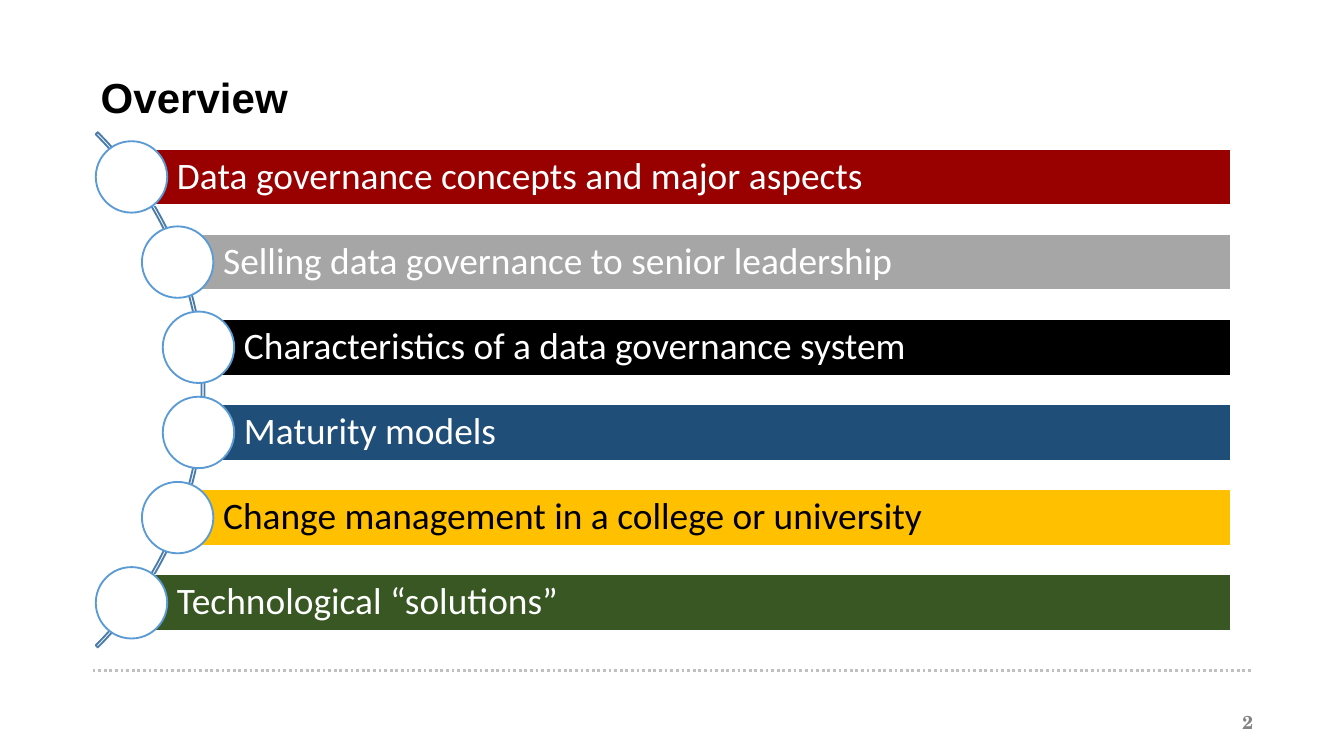
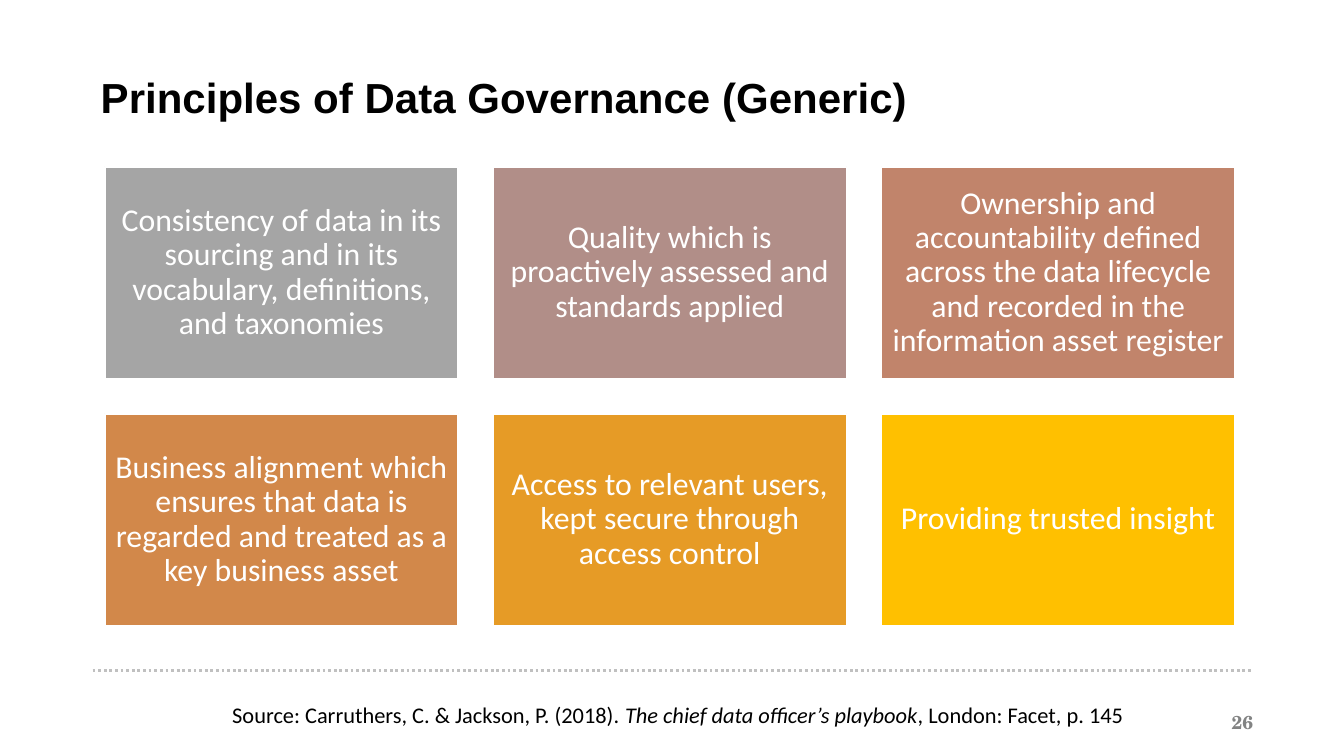
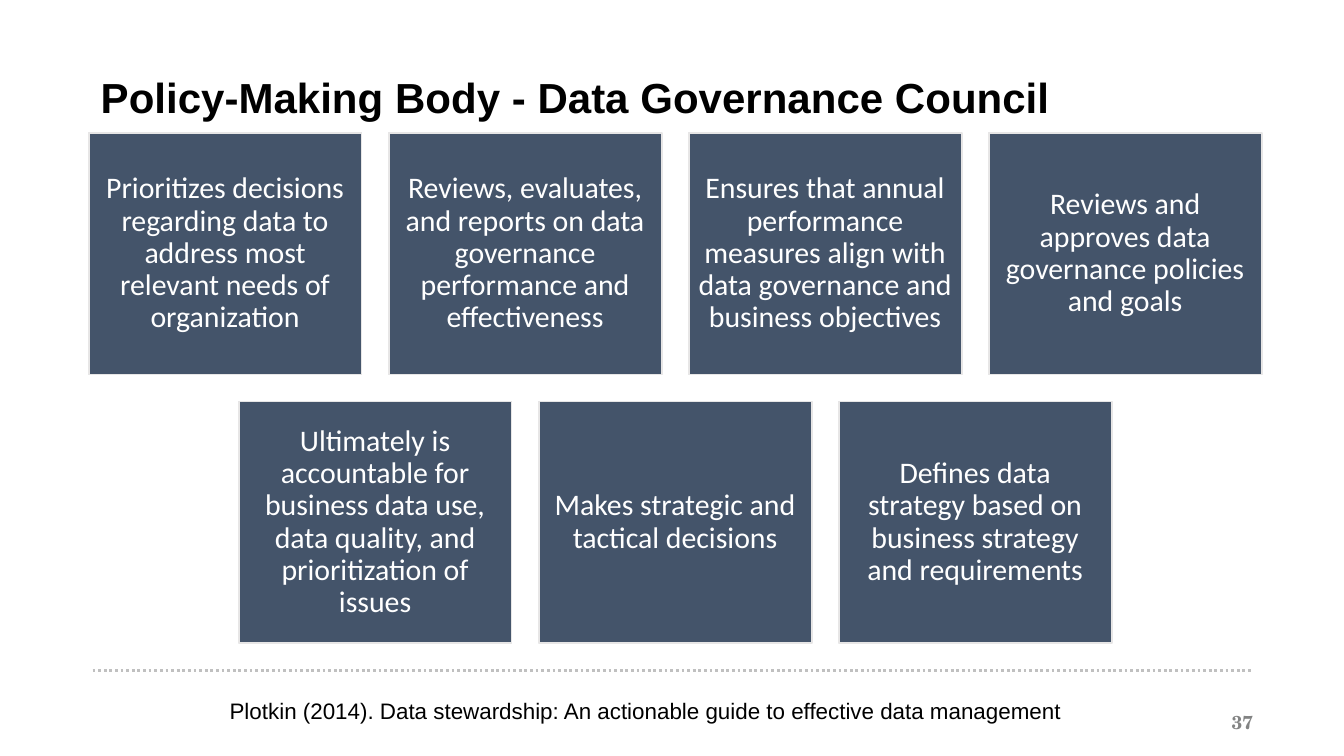
from dataclasses import dataclass
from math import sqrt

from lxml.etree import SubElement
from pptx import Presentation
from pptx.dml.color import RGBColor
from pptx.enum.dml import MSO_LINE
from pptx.enum.shapes import MSO_CONNECTOR, MSO_SHAPE
from pptx.enum.text import MSO_ANCHOR, MSO_AUTO_SIZE, PP_ALIGN
from pptx.oxml.ns import qn
from pptx.util import Cm, Pt

WHITE = RGBColor(0xFF, 0xFF, 0xFF)
BLACK = RGBColor(0x00, 0x00, 0x00)
DARK_RED = RGBColor(0x99, 0x00, 0x00)
LIGHT_GRAY = RGBColor(0xA6, 0xA6, 0xA6)
NAVY = RGBColor(0x1F, 0x4E, 0x79)
GOLD = RGBColor(0xFF, 0xC0, 0x00)
DARK_GREEN = RGBColor(0x38, 0x57, 0x23)
SKY_BLUE = RGBColor(0x5B, 0x9B, 0xD5)
ARC_BLUE = RGBColor(0x49, 0x7C, 0xAB)
MEDIUM_GRAY = RGBColor(0xA5, 0xA5, 0xA5)
DUSTY_ROSE = RGBColor(0xB1, 0x8E, 0x88)
CLAY = RGBColor(0xC1, 0x84, 0x6B)
COPPER = RGBColor(0xD2, 0x88, 0x4A)
AMBER = RGBColor(0xE6, 0x9B, 0x26)
SLATE = RGBColor(0x44, 0x54, 0x6A)
PALE_GRAY = RGBColor(0xE7, 0xE6, 0xE6)
RULE_GRAY = RGBColor(0xC0, 0xC0, 0xC0)
NUMBER_GRAY = RGBColor(0x82, 0x83, 0x83)

HEADING_FONT = "Arial"
BODY_FONT = "Calibri"
NUMBER_FONT = "TeX Gyre Schola"

ARC_CENTER_X, ARC_CENTER_Y, ARC_RADIUS = -3.02, 7.37, 6.885
TOPIC_RADIUS, TOPIC_PITCH = 6.82, 1.61
BAR_RIGHT, BAR_HEIGHT, CIRCLE_SIZE = 23.27, 1.07, 1.35


@dataclass(frozen=True)
class Topic:
    text: str
    fill: RGBColor
    color: RGBColor = WHITE


@dataclass(frozen=True)
class Card:
    text: str
    fill: RGBColor = SLATE


@dataclass(frozen=True)
class CardGrid:
    center: float
    top: float
    width: float
    height: float
    gap: float
    size: float
    line: RGBColor


@dataclass(frozen=True)
class Phrase:
    text: str
    italic: bool = False


TOPICS = [
    Topic("Data governance concepts and major aspects", DARK_RED),
    Topic("Selling data governance to senior leadership", LIGHT_GRAY),
    Topic("Characteristics of a data governance system", BLACK),
    Topic("Maturity models", NAVY),
    Topic("Change management in a college or university", GOLD, BLACK),
    Topic("Technological “solutions”", DARK_GREEN),
]

PRINCIPLE_GRID = CardGrid(12.66, 3.15, 6.68, 4.01, 0.66, 17, WHITE)
PRINCIPLES = [
    [
        Card("Consistency of data in its sourcing and in its vocabulary, "
             "definitions, and taxonomies", MEDIUM_GRAY),
        Card("Quality which is proactively assessed and standards applied", DUSTY_ROSE),
        Card("Ownership and accountability defined across the data lifecycle "
             "and recorded in the information asset register", CLAY),
    ],
    [
        Card("Business alignment which ensures that data is regarded and "
             "treated as a key business asset", COPPER),
        Card("Access to relevant users, kept secure through access control", AMBER),
        Card("Providing trusted insight", GOLD),
    ],
]

COUNCIL_GRID = CardGrid(12.76, 2.51, 5.16, 4.57, 0.51, 16, PALE_GRAY)
COUNCIL_DUTIES = [
    [
        Card("Prioritizes decisions regarding data to address most relevant "
             "needs of organization"),
        Card("Reviews, evaluates, and reports on data governance performance "
             "and effectiveness"),
        Card("Ensures that annual performance measures align with data "
             "governance and business objectives"),
        Card("Reviews and approves data governance policies and goals"),
    ],
    [
        Card("Ultimately is accountable for business data use, data quality, "
             "and prioritization of issues"),
        Card("Makes strategic and tactical decisions"),
        Card("Defines data strategy based on business strategy and requirements"),
    ],
]


def style_font(font, name: str, size: float, color: RGBColor, bold: bool = False) -> None:
    font.name = name
    font.size = Pt(size)
    font.color.rgb = color
    font.bold = bold


def add_outlined_shape(slide, kind, left: float, top: float, width: float,
                       height: float, fill: RGBColor | None, line: RGBColor):
    shape = slide.shapes.add_shape(kind, Cm(left), Cm(top), Cm(width), Cm(height))
    shape.shadow.inherit = False
    if fill is None:
        shape.fill.background()
    else:
        shape.fill.solid()
        shape.fill.fore_color.rgb = fill
    shape.line.color.rgb = line
    shape.line.width = Pt(1)
    return shape


def write_in_shape(shape, text: str, size: float, color: RGBColor,
                   alignment, left_inset: float, inset: float) -> None:
    frame = shape.text_frame
    frame.text = text
    frame.word_wrap = True
    frame.vertical_anchor = MSO_ANCHOR.MIDDLE
    frame.margin_left = Cm(left_inset)
    frame.margin_right = frame.margin_top = frame.margin_bottom = Cm(inset)
    paragraph = frame.paragraphs[0]
    paragraph.alignment = alignment
    paragraph.line_spacing = 0.9
    style_font(paragraph.runs[0].font, BODY_FONT, size, color)


def add_footer(slide, number: int) -> None:
    rule = slide.shapes.add_connector(
        MSO_CONNECTOR.STRAIGHT, Cm(1.75), Cm(12.67), Cm(23.67), Cm(12.67))
    rule.line.color.rgb = RULE_GRAY
    rule.line.width = Pt(1.5)
    rule.line.dash_style = MSO_LINE.ROUND_DOT
    SubElement(rule._element.spPr, qn("a:effectLst"))

    box = slide.shapes.add_textbox(Cm(18.21), Cm(13.26), Cm(5.72), Cm(0.76))
    frame = box.text_frame
    frame.word_wrap = True
    frame.vertical_anchor = MSO_ANCHOR.MIDDLE
    frame.text = str(number)
    paragraph = frame.paragraphs[0]
    paragraph.alignment = PP_ALIGN.RIGHT
    style_font(paragraph.runs[0].font, NUMBER_FONT, 10, NUMBER_GRAY, bold=True)


def add_titled_slide(presentation, title: str, number: int):
    slide = presentation.slides.add_slide(presentation.slide_layouts[5])
    placeholder = slide.shapes.title
    placeholder.left, placeholder.top = Cm(1.65), Cm(1.4)
    placeholder.width, placeholder.height = Cm(22.2), Cm(1.7)
    frame = placeholder.text_frame
    frame.text = title
    frame.auto_size = MSO_AUTO_SIZE.NONE
    frame.vertical_anchor = MSO_ANCHOR.TOP
    paragraph = frame.paragraphs[0]
    paragraph.alignment = PP_ALIGN.LEFT
    paragraph.line_spacing = 0.8
    style_font(paragraph.runs[0].font, HEADING_FONT, 22.5, BLACK, bold=True)
    add_footer(slide, number)
    return slide


def add_topics(slide, topics: list[Topic]) -> None:
    arc = add_outlined_shape(
        slide, MSO_SHAPE.BLOCK_ARC, ARC_CENTER_X - ARC_RADIUS, ARC_CENTER_Y - ARC_RADIUS,
        2 * ARC_RADIUS, 2 * ARC_RADIUS, None, ARC_BLUE)
    for index, value in enumerate((189, 27, 0.004)):
        arc.adjustments[index] = value

    for index, topic in enumerate(topics):
        offset = (index - (len(topics) - 1) / 2) * TOPIC_PITCH
        x = ARC_CENTER_X + sqrt(TOPIC_RADIUS ** 2 - offset ** 2)
        y = ARC_CENTER_Y + offset
        bar = add_outlined_shape(slide, MSO_SHAPE.RECTANGLE, x, y - BAR_HEIGHT / 2,
                                 BAR_RIGHT - x, BAR_HEIGHT, topic.fill, WHITE)
        write_in_shape(bar, topic.text, 20, topic.color, PP_ALIGN.LEFT, 0.86, 0.15)
        add_outlined_shape(slide, MSO_SHAPE.OVAL, x - CIRCLE_SIZE / 2, y - CIRCLE_SIZE / 2,
                           CIRCLE_SIZE, CIRCLE_SIZE, WHITE, SKY_BLUE)


def add_cards(slide, rows: list[list[Card]], grid: CardGrid) -> None:
    for row_index, row in enumerate(rows):
        row_width = len(row) * (grid.width + grid.gap) - grid.gap
        top = grid.top + row_index * (grid.height + grid.gap)
        for column, card in enumerate(row):
            left = grid.center - row_width / 2 + column * (grid.width + grid.gap)
            shape = add_outlined_shape(slide, MSO_SHAPE.RECTANGLE, left, top,
                                       grid.width, grid.height, card.fill, grid.line)
            write_in_shape(shape, card.text, grid.size, WHITE, PP_ALIGN.CENTER, 0.18, 0.18)


def add_source(slide, phrases: list[Phrase], font_name: str,
               left: float, top: float, width: float) -> None:
    box = slide.shapes.add_textbox(Cm(left), Cm(top), Cm(width), Cm(0.77))
    frame = box.text_frame
    frame.word_wrap = False
    frame.auto_size = MSO_AUTO_SIZE.SHAPE_TO_FIT_TEXT
    for phrase in phrases:
        run = frame.paragraphs[0].add_run()
        run.text = phrase.text
        style_font(run.font, font_name, 12, BLACK)
        run.font.italic = phrase.italic


def main() -> None:
    presentation = Presentation()
    presentation.slide_width = Cm(25.4)
    presentation.slide_height = Cm(14.29)

    overview = add_titled_slide(presentation, "Overview", 2)
    add_topics(overview, TOPICS)

    principles = add_titled_slide(presentation, "Principles of Data Governance (Generic)", 26)
    add_cards(principles, PRINCIPLES, PRINCIPLE_GRID)
    add_source(principles, [
        Phrase("Source: Carruthers, C. & Jackson, P. (2018). "),
        Phrase("The chief data officer’s playbook", italic=True),
        Phrase(", London: Facet, p. 145"),
    ], BODY_FONT, 4.14, 13.13, 17.55)

    council = add_titled_slide(presentation, "Policy-Making Body - Data Governance Council", 37)
    add_cards(council, COUNCIL_DUTIES, COUNCIL_GRID)
    add_source(council, [
        Phrase("Plotkin (2014). Data stewardship: An actionable guide to "
               "effective data management"),
    ], HEADING_FONT, 4.09, 13.06, 16.36)

    presentation.save("out.pptx")


if __name__ == "__main__":
    main()
